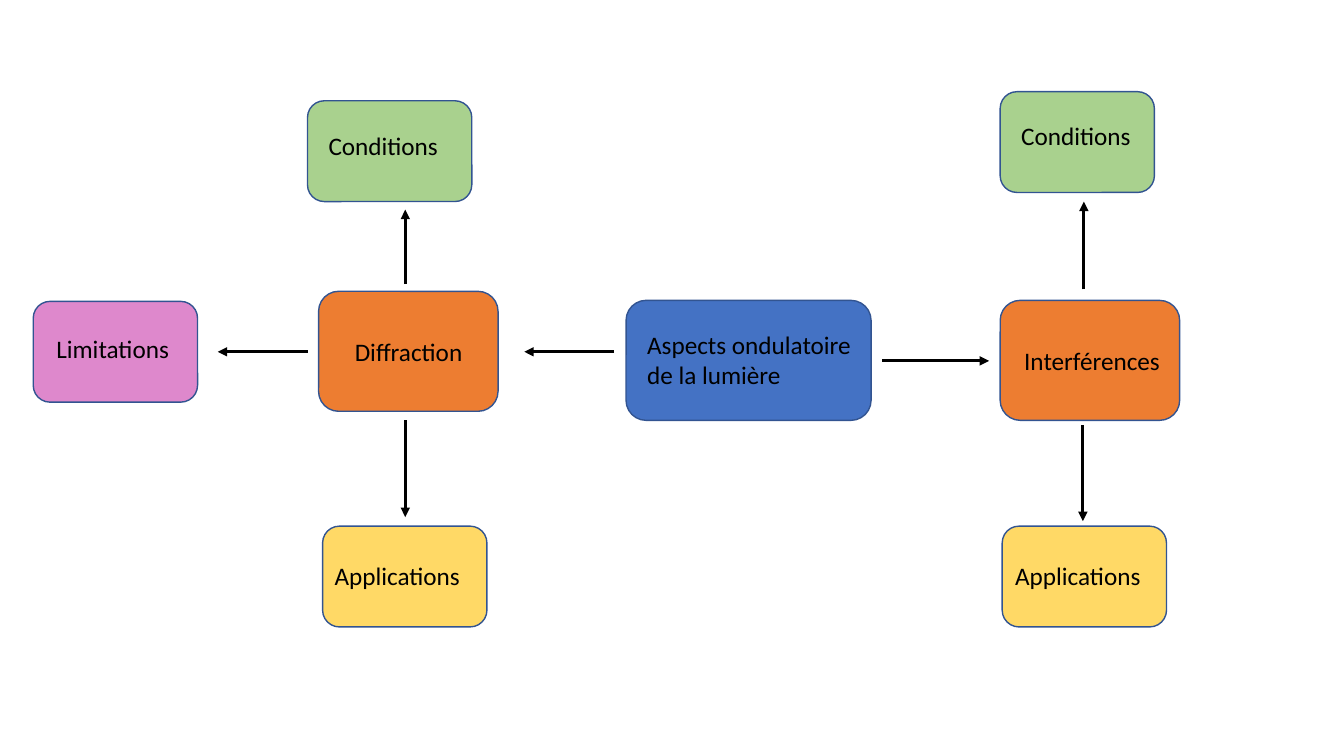
from dataclasses import dataclass

from lxml import etree
from pptx import Presentation
from pptx.dml.color import RGBColor
from pptx.enum import shapes, text
from pptx.oxml import ns
from pptx.slide import Slide
from pptx.util import Inches, Pt


@dataclass(frozen=True)
class Theme:
    font: str = "Calibri"
    size: float = 18
    ink: str = "000000"
    outline: str = "325491"
    outline_width: float = 1
    arrow_width: float = 2.25
    root: str = "4472C4"
    topic: str = "ED7D31"
    conditions: str = "A9D18E"
    applications: str = "FFD966"
    limitations: str = "DE88CC"


@dataclass(frozen=True)
class Box:
    left: float
    top: float
    width: float
    height: float

    def emu(self) -> list[int]:
        return [Inches(v) for v in (self.left, self.top, self.width, self.height)]


@dataclass(frozen=True)
class Node:
    label: str
    fill: str
    frame: Box
    label_box: Box


@dataclass(frozen=True)
class Arrow:
    x1: float
    y1: float
    x2: float
    y2: float


THEME = Theme()

NODES = [
    Node("Aspects ondulatoire de la lumière", THEME.root,
         Box(6.21, 2.98, 2.43, 1.19), Box(6.32, 3.22, 2.32, 0.71)),
    Node("Interférences", THEME.topic,
         Box(9.92, 2.98, 1.78, 1.19), Box(10.06, 3.38, 1.64, 0.4)),
    Node("Diffraction", THEME.topic,
         Box(3.16, 2.89, 1.78, 1.19), Box(3.42, 3.29, 1.78, 0.4)),
    Node("Conditions", THEME.conditions,
         Box(3.05, 1, 1.63, 1), Box(3.16, 1.24, 1.42, 0.4)),
    Node("Conditions", THEME.conditions,
         Box(9.92, 0.91, 1.53, 1), Box(10.03, 1.14, 1.42, 0.4)),
    Node("Applications", THEME.applications,
         Box(3.2, 5.22, 1.63, 1), Box(3.22, 5.51, 1.78, 0.4)),
    Node("Applications", THEME.applications,
         Box(9.94, 5.22, 1.63, 1), Box(9.97, 5.51, 1.78, 0.4)),
    Node("Limitations", THEME.limitations,
         Box(0.33, 2.99, 1.63, 1), Box(0.46, 3.26, 1.69, 0.4)),
]

ARROWS = [
    Arrow(8.75, 3.58, 9.81, 3.58),
    Arrow(6.09, 3.49, 5.2, 3.49),
    Arrow(4.02, 2.82, 4.02, 2.08),
    Arrow(10.75, 2.87, 10.75, 2),
    Arrow(4.02, 4.17, 4.02, 5.13),
    Arrow(10.74, 4.22, 10.74, 5.17),
    Arrow(3.05, 3.49, 2.16, 3.49),
]


def draw_node(s: Slide, node: Node) -> None:
    sp = s.shapes.add_shape(shapes.MSO_SHAPE.ROUNDED_RECTANGLE, *node.frame.emu())
    sp.shadow.inherit = False
    sp.fill.solid()
    sp.fill.fore_color.rgb = RGBColor.from_string(node.fill)
    sp.line.color.rgb = RGBColor.from_string(THEME.outline)
    sp.line.width = Pt(THEME.outline_width)

    tf = s.shapes.add_textbox(*node.label_box.emu()).text_frame
    tf.word_wrap = True
    tf.auto_size = text.MSO_AUTO_SIZE.SHAPE_TO_FIT_TEXT
    tf.text = node.label
    r = tf.paragraphs[0].runs[0]
    r.font.name = THEME.font
    r.font.size = Pt(THEME.size)
    r.font.color.rgb = RGBColor.from_string(THEME.ink)


def draw_arrow(s: Slide, arrow: Arrow) -> None:
    ends = [Inches(v) for v in (arrow.x1, arrow.y1, arrow.x2, arrow.y2)]
    cxn = s.shapes.add_connector(shapes.MSO_CONNECTOR.STRAIGHT, *ends)
    cxn.line.color.rgb = RGBColor.from_string(THEME.ink)
    cxn.line.width = Pt(THEME.arrow_width)
    ln = cxn.line._get_or_add_ln()
    etree.SubElement(ln, ns.qn("a:tailEnd"), type="triangle")
    etree.SubElement(cxn._element.spPr, ns.qn("a:effectLst"))


def main() -> None:
    prs = Presentation()
    prs.slide_width = Inches(13.33)
    prs.slide_height = Inches(7.5)
    s = prs.slides.add_slide(prs.slide_layouts[6])
    for node in NODES:
        draw_node(s, node)
    for arrow in ARROWS:
        draw_arrow(s, arrow)
    prs.save("out.pptx")


if __name__ == "__main__":
    main()
